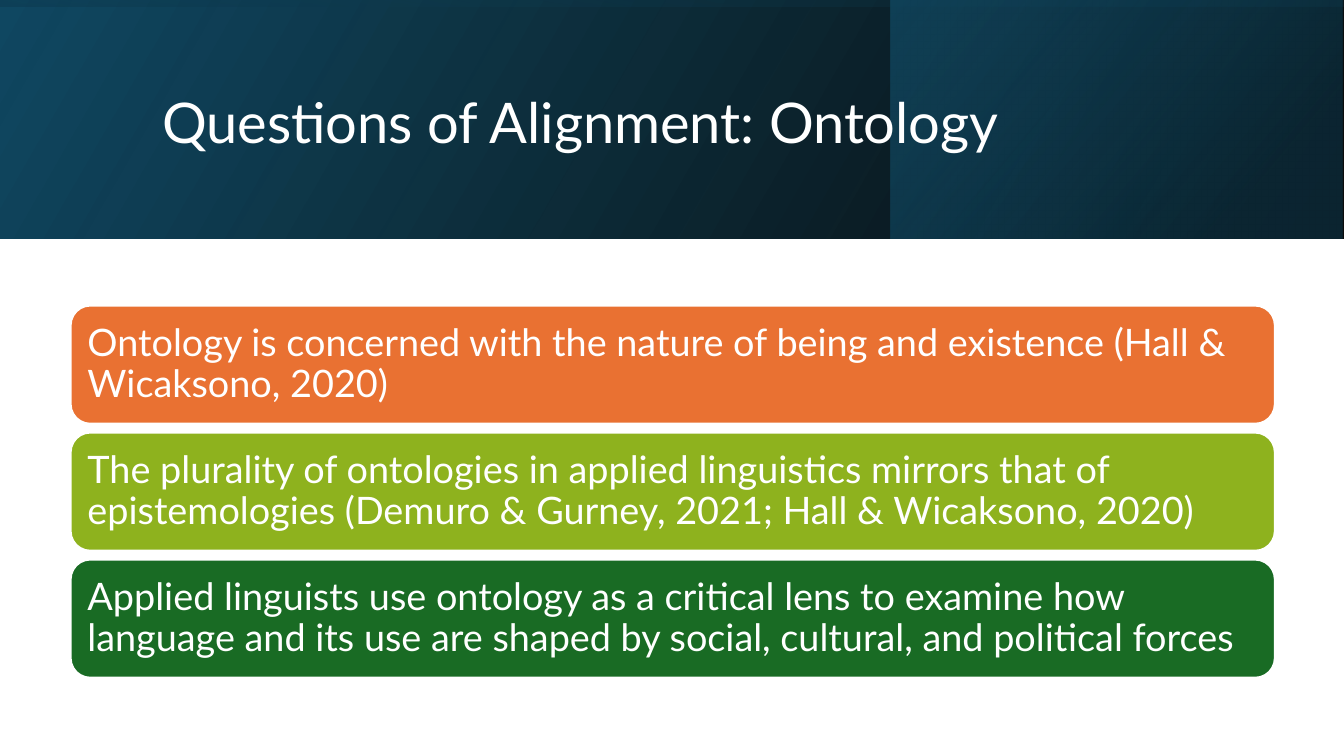
import lxml.etree
import pptx
import pptx.dml.color
import pptx.enum.shapes
import pptx.enum.text
import pptx.oxml.ns
import pptx.util

Cm = pptx.util.Cm
Pt = pptx.util.Pt
Shape = pptx.enum.shapes.MSO_SHAPE
qn = pptx.oxml.ns.qn

WIDTH, HEIGHT, BAND = 33.87, 19.05, 6.02
LEFT, TOP, PITCH = 1.78, 7.7, 3.2
CARDS = [
    ("E97132", "Ontology is concerned with the nature of being and existence "
               "(Hall & Wicaksono, 2020)"),
    ("8EB21E", "The plurality of ontologies in applied linguistics mirrors that of "
               "epistemologies (Demuro & Gurney, 2021; Hall & Wicaksono, 2020)"),
    ("196B24", "Applied linguists use ontology as a critical lens to examine how "
               "language and its use are shaped by social, cultural, and political forces"),
]


def color(code):
    return pptx.dml.color.RGBColor.from_string(code)


def add_band(slide, box, angle, stops, turn=0):
    band = slide.shapes.add_shape(Shape.RECTANGLE, *map(Cm, box))
    band.shadow.inherit = False
    band.line.fill.background()
    band.rotation = turn
    band._element.spPr.find(qn("a:xfrm")).set("flipH", "1")
    band.fill.gradient()
    band.fill.gradient_angle = angle
    for stop, (place, code, _) in zip(band.fill.gradient_stops, stops):
        stop.position = place / 100
        stop.color.rgb = color(code)
    tints = band._element.spPr.find(qn("a:gradFill")).iter(qn("a:srgbClr"))
    for tint, (_, _, alpha) in zip(tints, stops):
        lxml.etree.SubElement(tint, qn("a:alpha")).set("val", str(alpha * 1000))


def set_text(shape, text, size):
    frame = shape.text_frame
    frame.word_wrap = True
    frame.vertical_anchor = pptx.enum.text.MSO_ANCHOR.MIDDLE
    frame.text = text
    para = frame.paragraphs[0]
    para.alignment = pptx.enum.text.PP_ALIGN.LEFT
    para.line_spacing = 0.9
    font = para.runs[0].font
    font.name = "Lato"
    font.size = Pt(size)
    font.color.rgb = color("FFFFFF")


def add_title(slide, text):
    box = slide.shapes.add_textbox(Cm(3.84), Cm(0.97), Cm(27), Cm(4.37))
    set_text(box, text, 40)


def add_card(slide, top, fill, text):
    card = slide.shapes.add_shape(
        Shape.ROUNDED_RECTANGLE, Cm(LEFT), Cm(top), Cm(30.35), Cm(2.98))
    card.shadow.inherit = False
    card.fill.solid()
    card.fill.fore_color.rgb = color(fill)
    card.line.color.rgb = color("FFFFFF")
    card.line.width = Pt(1.5)
    frame = card.text_frame
    frame.margin_left = frame.margin_right = Cm(0.28)
    frame.margin_top = frame.margin_bottom = Cm(0.28)
    set_text(card, text, 27)


def main():
    deck = pptx.Presentation()
    deck.slide_width, deck.slide_height = Cm(WIDTH), Cm(HEIGHT)
    slide = deck.slides.add_slide(deck.slide_layouts[6])
    add_band(slide, (0, 0, WIDTH, BAND), 30,
             [(0, "000000", 96), (100, "104862", 100)])
    add_band(slide, (22.45, 0, 11.39, BAND), 40,
             [(19, "0B3041", 68), (100, "156082", 48)])
    shift = (WIDTH - BAND) / 2
    add_band(slide, (shift, -shift, BAND, WIDTH), 10,
             [(23, "104862", 16), (99, "000000", 45)], 270)
    add_title(slide, "Questions of Alignment: Ontology")
    for row, (fill, text) in enumerate(CARDS):
        add_card(slide, TOP + row * PITCH, fill, text)
    deck.save("out.pptx")


if __name__ == "__main__":
    main()
